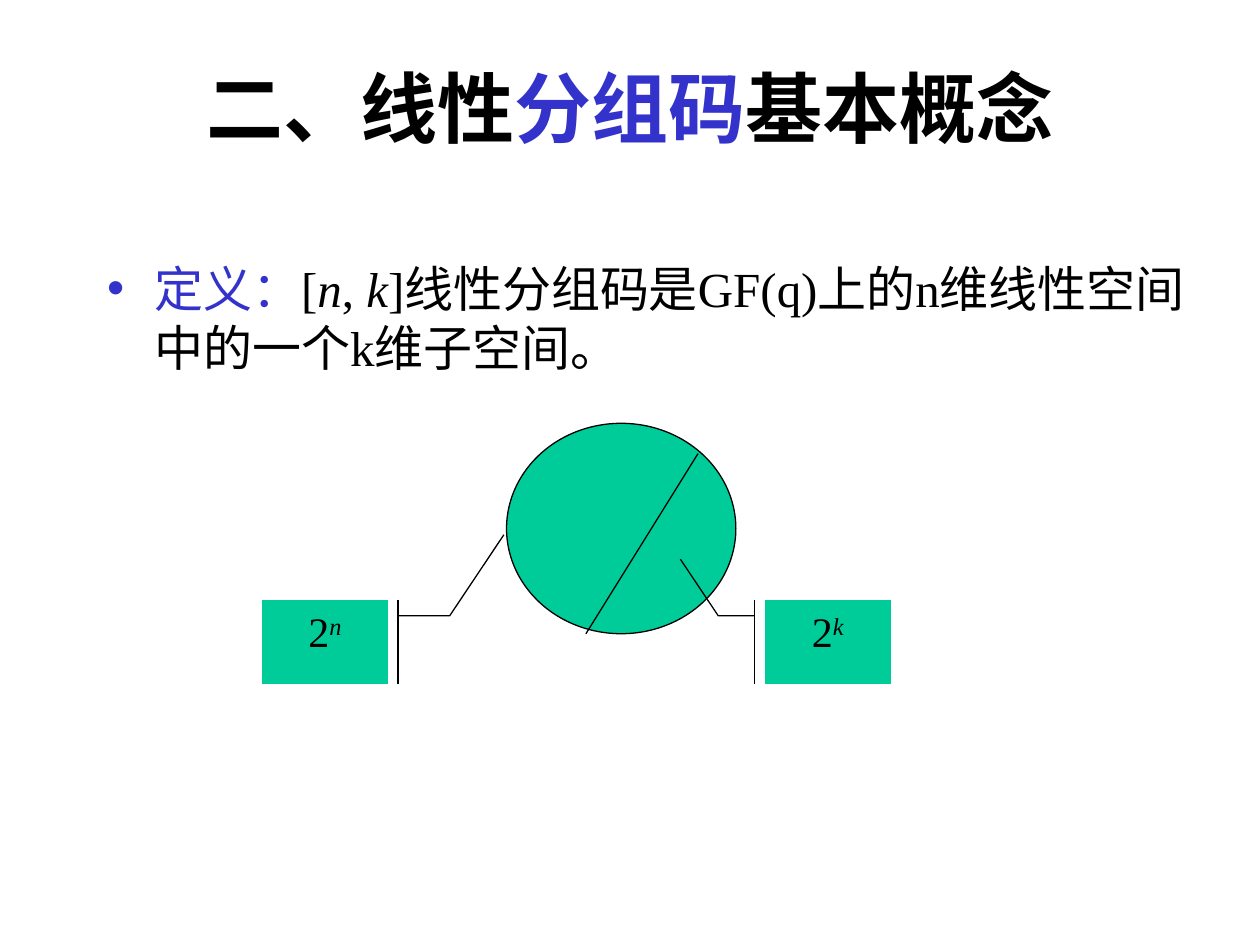
from pptx import Presentation
from pptx.dml.color import RGBColor
from pptx.enum.shapes import MSO_CONNECTOR as Connector, MSO_SHAPE as Shape
from pptx.enum.text import MSO_ANCHOR as Anchor, MSO_AUTO_SIZE as AutoSize, PP_ALIGN as Align
from pptx.oxml.ns import qn
from pptx.util import Inches, Pt
from lxml import etree

COLORS = {"text": "000000", "accent": "3333CC", "fill": "00CC99"}


class SlideBuilder:
    font_name = "Times New Roman"
    line_width = Pt(0.75)

    def __init__(self, slide):
        self.slide = slide
        self.diagram = None

    def color(self, key):
        return RGBColor.from_string(COLORS[key])

    def add_runs(self, paragraph, pieces, size):
        """Add (text, format) pieces; a format may hold color, baseline and font values."""
        for text, style in pieces:
            run = paragraph.add_run()
            run.text = text
            values = dict(style)
            run.font.color.rgb = self.color(values.pop("color", "text"))
            if "baseline" in values:
                run._r.get_or_add_rPr().set("baseline", values.pop("baseline"))
            values = {"name": self.font_name, "size": Pt(size), **values}
            for attribute, value in values.items():
                setattr(run.font, attribute, value)

    def fill_placeholder(self, placeholder, box, pieces, size, frame_format):
        places = zip(("left", "top", "width", "height"), box)
        for attribute, value in places:
            setattr(placeholder, attribute, Inches(value))
        frame = placeholder.text_frame
        for attribute, value in frame_format.items():
            setattr(frame, attribute, value)
        self.add_runs(frame.paragraphs[0], pieces, size)

    def start_diagram(self):
        self.diagram = self.slide.shapes.add_group_shape()

    def outline(self, item):
        item.line.color.rgb = self.color("text")
        item.line.width = self.line_width

    def shape(self, kind, box):
        item = self.diagram.shapes.add_shape(kind, *map(Inches, box))
        item.shadow.inherit = False
        item.fill.solid()
        item.fill.fore_color.rgb = self.color("fill")
        self.outline(item)
        return item

    def line(self, start, end):
        item = self.diagram.shapes.add_connector(
            Connector.STRAIGHT, *map(Inches, start + end))
        self.outline(item)
        etree.SubElement(item._element.spPr, qn("a:effectLst"))

    def callout(self, box, exponent, leader):
        item = self.shape(Shape.LINE_CALLOUT_2_ACCENT_BAR, box)
        for index, value in enumerate(leader):
            item.adjustments[index] = value
        item.text_frame.vertical_anchor = Anchor.TOP
        label = item.text_frame.paragraphs[0]
        label.alignment = Align.CENTER
        power = {"italic": True, "baseline": "30000"}
        self.add_runs(label, [("2", {}), (exponent, power)], 24)


def main():
    deck = Presentation()
    deck.slide_width, deck.slide_height = Inches(10), Inches(7.5)
    slide = deck.slides.add_slide(deck.slide_layouts[1])
    builder = SlideBuilder(slide)

    # Title, raised by its bottom margin
    bold, italic = {"bold": True}, {"italic": True}
    builder.fill_placeholder(
        slide.shapes.title, (0.75, 0.4, 8.5, 1.61),
        [("二、线性", bold), ("分组码", {**bold, "color": "accent"}), ("基本概念", bold)],
        44, {"auto_size": AutoSize.NONE, "vertical_anchor": Anchor.MIDDLE,
             "margin_bottom": Inches(0.76)})

    # Definition
    builder.fill_placeholder(
        slide.placeholders[1], (0.75, 2, 8.88, 1.23),
        [("定义：", {"color": "accent"}), ("[", {}), ("n", italic), (", ", {}),
         ("k", italic), ("]线性分组码是GF(q)上的n维线性空间中的一个k维子空间。", {})],
        28, {"auto_size": AutoSize.NONE})

    # Code space, divided by a chord
    builder.start_diagram()
    builder.shape(Shape.OVAL, (4.02, 3.36, 1.82, 1.67))
    builder.line((5.54, 3.6), (4.65, 5.03))

    # Sizes of the subspace and of the whole space; leader points are y, x pairs
    callouts = [
        (6.07, "k", (0.19, -0.08, 0.19, -0.37, -0.48, -0.67)),
        (2.08, "n", (0.19, 1.08, 0.19, 1.49, -0.77, 1.92)),
    ]
    for left, exponent, leader in callouts:
        builder.callout((left, 4.76, 1, 0.67), exponent, leader)

    deck.save("out.pptx")


if __name__ == "__main__":
    main()
